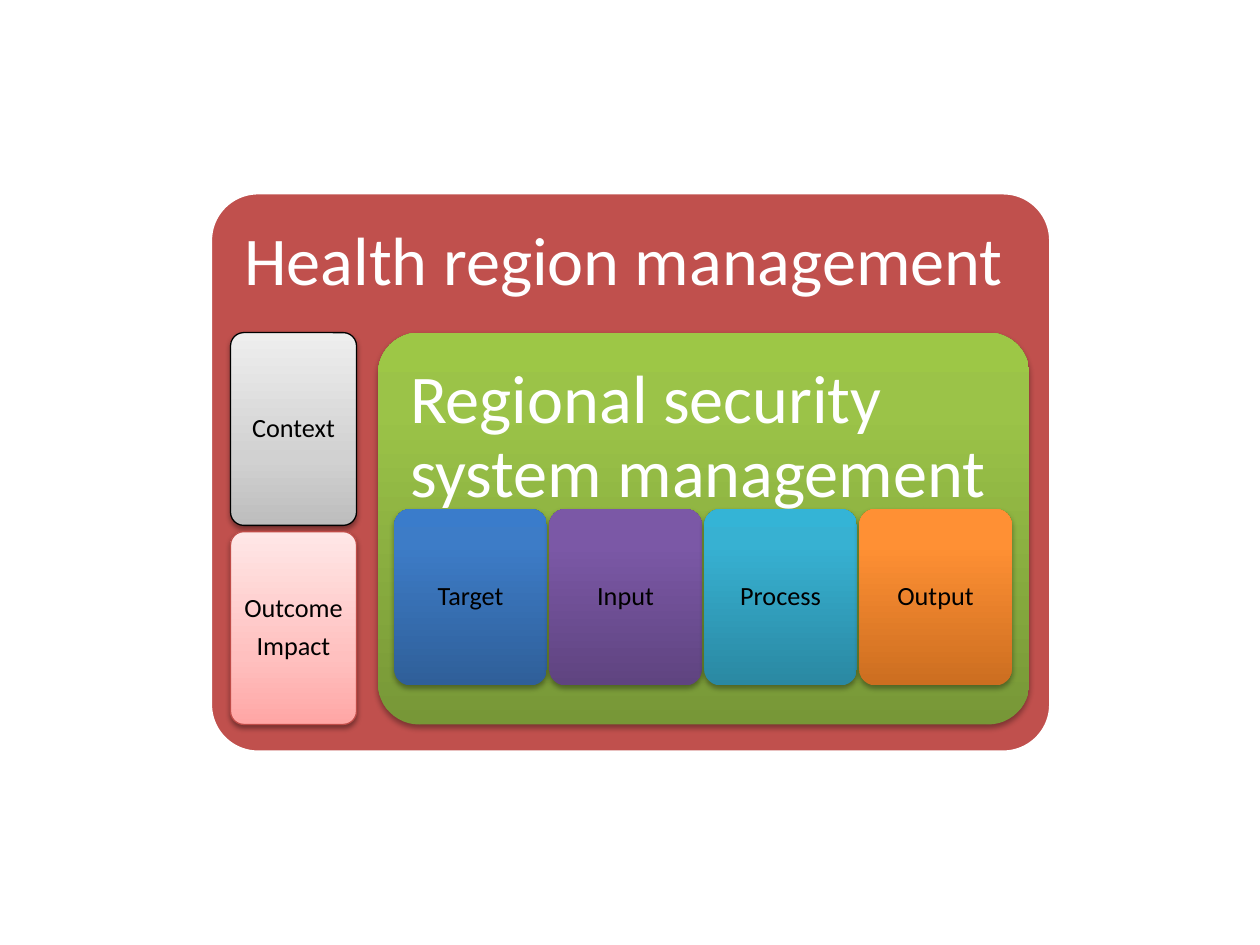
"""Build a slide of nested management levels with their component tiles."""
from dataclasses import dataclass

from lxml import etree
from pptx import Presentation
from pptx.dml.color import RGBColor
from pptx.enum.shapes import MSO_SHAPE
from pptx.enum.text import MSO_ANCHOR, PP_ALIGN
from pptx.oxml.ns import qn
from pptx.util import Inches, Pt

ROUNDED = MSO_SHAPE.ROUNDED_RECTANGLE
TOP, MIDDLE = MSO_ANCHOR.TOP, MSO_ANCHOR.MIDDLE
LEFT, CENTER = PP_ALIGN.LEFT, PP_ALIGN.CENTER

FONT = "Calibri"
COLORS = {"white": "FFFFFF", "black": "000000", "red": "C0504D", "pink_line": "BF4C48"}
GRADIENTS = {
    "gray": ((0, "BDBDBD"), (35, "D1D1D1"), (100, "EEEEEE")),
    "pink": ((0, "FFA6A5"), (35, "FFC0BF"), (100, "FFE7E7")),
    "green": ((0, "779737"), (80, "9BC348"), (100, "9DC746")),
    "blue": ((0, "2F5F99"), (80, "3D7CC7"), (100, "3A7CCB")),
    "purple": ((0, "5F4480"), (80, "7B58A6"), (100, "7C57A8")),
    "teal": ((0, "2A88A2"), (80, "37B1D2"), (100, "34B4D6")),
    "orange": ((0, "CC6E20"), (80, "FF9034"), (100, "FF9136")),
}
TILE_LEFT, TILE_PITCH = 3.13, 1.23


@dataclass(frozen=True)
class TextStyle:
    size: float
    color: str
    align: PP_ALIGN
    anchor: MSO_ANCHOR
    inset: float


@dataclass(frozen=True)
class Box:
    text: str
    left: float
    top: float
    width: float
    height: float
    fill: str
    style: TextStyle
    line: str = ""
    line_width: float = 0.75
    corner: float = 0.105
    bottom_inset: float = 0.06
    shadow_alpha: int = 35
    shadow_distance: float = 1.8


HEADING = TextStyle(39, "white", LEFT, TOP, 0.16)
LABEL = TextStyle(15, "black", CENTER, MIDDLE, 0.06)


def rgb(name: str) -> RGBColor:
    """Return the named colour."""
    return RGBColor.from_string(COLORS[name])


def add_color(parent, value: str):
    """Append an sRGB colour element and return it."""
    return etree.SubElement(parent, qn("a:srgbClr"), val=value)


def set_gradient(s, stops: tuple) -> None:
    """Fill a shape from bottom to top with the given stops."""
    s.fill.gradient()
    s.fill.gradient_angle = 90
    gs_list = s.element.spPr.find(qn("a:gradFill")).find(qn("a:gsLst"))
    for gs in list(gs_list):
        gs_list.remove(gs)
    for percent, value in stops:
        add_color(etree.SubElement(gs_list, qn("a:gs"), pos=str(percent * 1000)), value)


def add_shadow(s, alpha: int, distance: float) -> None:
    """Give a shape a soft shadow straight below it."""
    effects = s.element.spPr.find(qn("a:effectLst"))
    shadow = etree.SubElement(
        effects, qn("a:outerShdw"), blurRad=str(Pt(3.1)), dist=str(Pt(distance)),
        dir="5400000", rotWithShape="0")
    color = add_color(shadow, COLORS["black"])
    etree.SubElement(color, qn("a:alpha"), val=str(alpha * 1000))


def set_text(s, box: Box) -> None:
    """Write and format the text of a box."""
    style, tf = box.style, s.text_frame
    tf.word_wrap = True
    tf.vertical_anchor = style.anchor
    tf.margin_left = tf.margin_right = tf.margin_top = Inches(style.inset)
    tf.margin_bottom = Inches(box.bottom_inset)
    tf.text = box.text
    for p in tf.paragraphs:
        p.alignment = style.align
        p.line_spacing = 0.9
        p.space_after = Pt(0.35 * style.size)
        for r in p.runs:
            r.font.name = FONT
            r.font.size = Pt(style.size)
            r.font.color.rgb = rgb(style.color)


def draw_box(slide, box: Box) -> None:
    """Draw one rounded box with its text."""
    s = slide.shapes.add_shape(
        ROUNDED, Inches(box.left), Inches(box.top), Inches(box.width), Inches(box.height))
    s.adjustments[0] = box.corner
    s.shadow.inherit = False
    if box.fill in GRADIENTS:
        set_gradient(s, GRADIENTS[box.fill])
        add_shadow(s, box.shadow_alpha, box.shadow_distance)
    else:
        s.fill.solid()
        s.fill.fore_color.rgb = rgb(box.fill)
    if box.line:
        s.line.color.rgb = rgb(box.line)
        s.line.width = Pt(box.line_width)
    else:
        s.line.fill.background()
    set_text(s, box)


def main() -> None:
    """Build and save the presentation."""
    prs = Presentation()
    prs.slide_width, prs.slide_height = Inches(10), Inches(7.5)
    slide = prs.slides.add_slide(prs.slide_layouts[6])
    boxes = [
        Box("Health region management", 1.67, 1.53, 6.67, 4.44, "red", HEADING,
            "white", 2, corner=0.085, bottom_inset=3.45),
        Box("Context", 1.83, 2.64, 1, 1.53, "gray", LABEL, "black",
            shadow_alpha=38, shadow_distance=1.6),
        Box("Outcome\nImpact", 1.83, 4.22, 1, 1.53, "pink", LABEL, "pink_line",
            shadow_alpha=38, shadow_distance=1.6),
        Box("Regional security system management", 3, 2.64, 5.17, 3.11, "green",
            HEADING, bottom_inset=1.98),
    ]
    tiles = (("Target", "blue"), ("Input", "purple"), ("Process", "teal"), ("Output", "orange"))
    boxes += [Box(text, TILE_LEFT + i * TILE_PITCH, 4.04, 1.21, 1.4, fill, LABEL)
              for i, (text, fill) in enumerate(tiles)]
    for box in boxes:
        draw_box(slide, box)
    prs.save("out.pptx")


if __name__ == "__main__":
    main()
